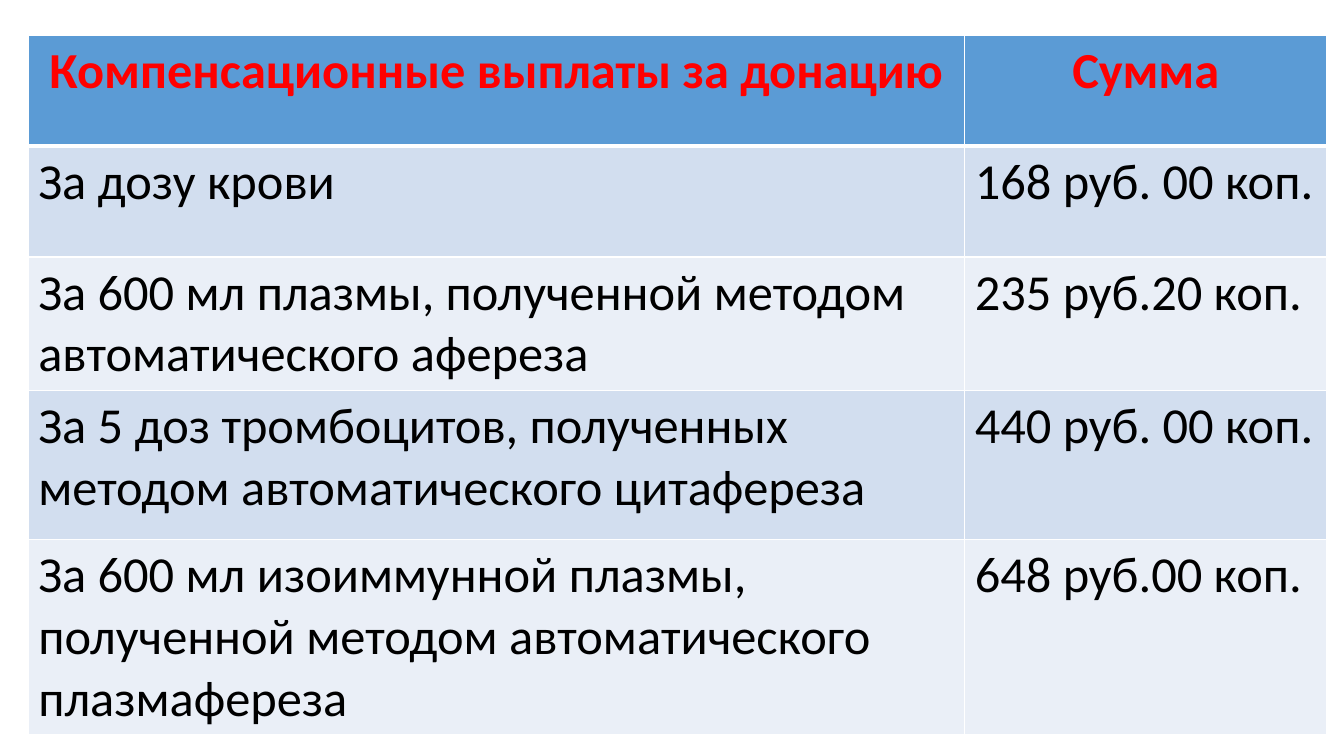
from lxml.etree import SubElement
from pptx import Presentation
from pptx.dml.color import RGBColor
from pptx.enum.text import PP_ALIGN
from pptx.oxml.ns import qn
from pptx.util import Inches, Pt

WHITE = RGBColor(0xFF, 0xFF, 0xFF)
BLACK = RGBColor(0x00, 0x00, 0x00)
RED = RGBColor(0xFF, 0x00, 0x00)
HEADER_BLUE = RGBColor(0x5B, 0x9B, 0xD5)
BANDS = (RGBColor(0xD2, 0xDE, 0xEF), RGBColor(0xEA, 0xEF, 0xF7))

PAYMENTS = [
    ("Компенсационные выплаты за донацию", "Сумма"),
    ("За дозу крови", "168 руб. 00 коп."),
    ("За 600 мл плазмы, полученной методом автоматического афереза",
     "235 руб.20 коп."),
    ("За 5 доз тромбоцитов, полученных методом автоматического цитафереза",
     "440 руб. 00 коп."),
    ("За 600 мл изоиммунной плазмы, полученной методом автоматического плазмафереза",
     "648 руб.00 коп."),
]
COLUMN_SHARES = (69.69, 26.93)
ROW_SHARES = (14.67, 14.67, 14.67, 19.73, 19.73)


class SlideBuilder:
    font_name = "Calibri"
    font_size = Pt(36)

    def __init__(self, presentation):
        self.width = presentation.slide_width
        self.height = presentation.slide_height
        self.slide = presentation.slides.add_slide(presentation.slide_layouts[6])

    def across(self, share):
        return round(self.width * share / 100)

    def down(self, share):
        return round(self.height * share / 100)

    def table(self, left, top, column_shares, row_shares, entries):
        frame = self.slide.shapes.add_table(
            len(row_shares), len(column_shares),
            self.across(left), self.down(top),
            self.across(sum(column_shares)), self.down(sum(row_shares)))
        grid = frame.table
        for column, share in zip(grid.columns, column_shares):
            column.width = self.across(share)
        for row, share in zip(grid.rows, row_shares):
            row.height = self.down(share)
        for row_index, entry in enumerate(entries):
            for column_index, wording in enumerate(entry):
                self.cell(grid.cell(row_index, column_index), wording, row_index)

    def cell(self, cell, wording, row_index):
        is_header = row_index == 0
        cell.fill.solid()
        cell.fill.fore_color.rgb = HEADER_BLUE if is_header else BANDS[(row_index - 1) % 2]
        cell.text_frame.text = wording
        paragraph = cell.text_frame.paragraphs[0]
        paragraph.alignment = PP_ALIGN.CENTER if is_header else PP_ALIGN.LEFT
        font = paragraph.runs[0].font
        font.name = self.font_name
        font.size = self.font_size
        font.bold = is_header
        font.color.rgb = RED if is_header else BLACK
        self.borders(cell, top=3 if row_index == 1 else 1, bottom=3 if is_header else 1)

    def borders(self, cell, top, bottom):
        properties = cell._tc.get_or_add_tcPr()
        sides = (("a:lnL", 1), ("a:lnR", 1), ("a:lnT", top), ("a:lnB", bottom))
        for position, (side, points) in enumerate(sides):
            line = SubElement(properties, qn(side), w=str(Pt(points)))
            fill = SubElement(line, qn("a:solidFill"))
            SubElement(fill, qn("a:srgbClr"), val=str(WHITE))
            properties.insert(position, line)


def main():
    presentation = Presentation()
    presentation.slide_width = Inches(13.33)
    presentation.slide_height = Inches(7.5)
    builder = SlideBuilder(presentation)
    builder.table(2.1, 4.67, COLUMN_SHARES, ROW_SHARES, PAYMENTS)
    presentation.save("out.pptx")


if __name__ == "__main__":
    main()
